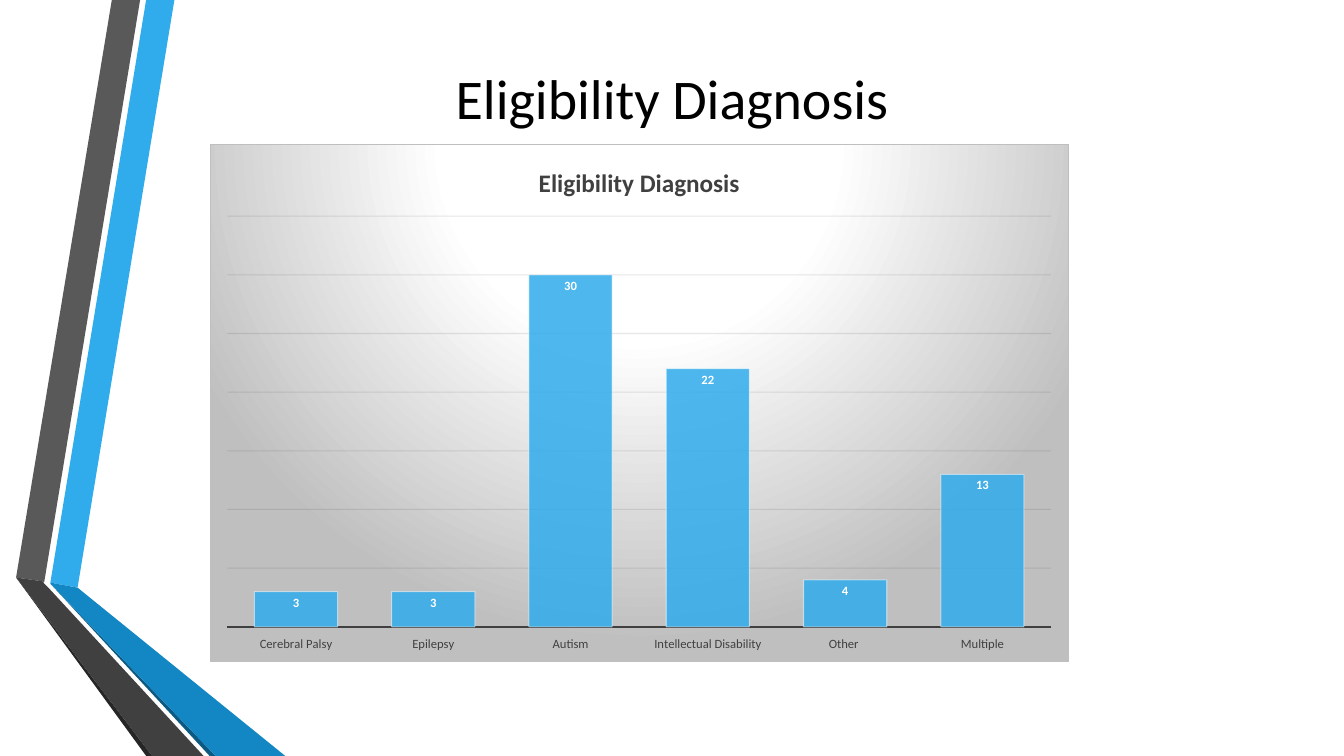
from dataclasses import dataclass

from lxml.etree import fromstring
from pptx import Presentation
from pptx.chart.data import CategoryChartData
from pptx.dml.color import RGBColor
from pptx.enum.chart import XL_CHART_TYPE, XL_LABEL_POSITION, XL_TICK_LABEL_POSITION, XL_TICK_MARK
from pptx.enum.text import MSO_ANCHOR, PP_ALIGN
from pptx.oxml.ns import qn
from pptx.util import Inches, Pt

TITLE = "Eligibility Diagnosis"
DIAGNOSES = {
    "Cerebral Palsy": 3,
    "Epilepsy": 3,
    "Autism": 30,
    "Intellectual Disability": 22,
    "Other ": 4,
    "Multiple": 13,
}

# Ribbon outlines in hundredths of an inch, from back to front
RIBBONS = [
    ("30ACEC", [(50, 578), (77, 583), (173, 0), (145, 0)]),
    ("595959", [(139, 0), (111, 0), (16, 573), (44, 577)]),
    ("262626", [(16, 573), (145, 750), (151, 750)]),
    ("0C5A82", [(50, 579), (208, 750), (214, 750)]),
    ("1287C3", [(50, 579), (214, 750), (283, 750), (77, 583), (50, 578)]),
    ("404040", [(202, 750), (48, 583), (43, 578), (44, 577), (16, 573), (151, 750)]),
]

SLIDE_SIZE = (13.33, 7.5)
TITLE_BOX = (0.92, 0.37, 11.49, 1.18)
CHART_BOX = (2.08, 1.43, 8.52, 5.14)
A_NS = "http://schemas.openxmlformats.org/drawingml/2006/main"
C_NS = "http://schemas.openxmlformats.org/drawingml/2006/chart"


@dataclass(frozen=True)
class Theme:
    font: str = "Calibri"
    black: str = "000000"
    white: str = "FFFFFF"
    dark: str = "404040"
    grid: str = "0D0D0D"
    edge: str = "BFBFBF"
    bar: str = "30ACEC"
    title_size: int = 40
    chart_title_size: int = 18
    chart_size: int = 10
    label_size: int = 9
    thin: float = 0.75
    thick: float = 1.5


THEME = Theme()


def style_font(font, size, color, bold=False):
    font.name = THEME.font
    font.size = Pt(size)
    font.bold = bold
    font.color.rgb = RGBColor.from_string(color)


def paint(fill, color, opacity=100):
    fill.solid()
    fill.fore_color.rgb = RGBColor.from_string(color)
    if opacity < 100:
        solid = fill._xPr.find(qn("a:solidFill"))
        solid[0].append(fromstring(f'<a:alpha xmlns:a="{A_NS}" val="{opacity * 1000}"/>'))


def style_line(line, color, width, opacity=100):
    line.width = Pt(width)
    paint(line.fill, color, opacity)


def add_ribbons(page):
    group = page.shapes.add_group_shape()
    for color, points in RIBBONS:
        builder = group.shapes.build_freeform(*points[0], scale=Inches(0.01))
        builder.add_line_segments(points[1:], close=True)
        ribbon = builder.convert_to_shape()
        ribbon.shadow.inherit = False
        paint(ribbon.fill, color)
        ribbon.line.fill.background()


def write_title(page):
    box = page.shapes.title
    box.left, box.top, box.width, box.height = map(Inches, TITLE_BOX)
    frame = box.text_frame
    frame.word_wrap = True
    frame.vertical_anchor = MSO_ANCHOR.MIDDLE
    para = frame.paragraphs[0]
    para.alignment = PP_ALIGN.CENTER
    span = para.add_run()
    span.text = TITLE
    style_font(span.font, THEME.title_size, THEME.black)


def add_backdrop(chart):
    """Give the chart area its circular gradient and thin border."""
    stops = [(0, THEME.white), (39, THEME.white), (100, THEME.edge)]
    gradient = "".join(
        f'<a:gs pos="{share * 1000}"><a:srgbClr val="{color}"/></a:gs>' for share, color in stops
    )
    backdrop = fromstring(
        f'<c:spPr xmlns:c="{C_NS}" xmlns:a="{A_NS}"><a:gradFill><a:gsLst>{gradient}</a:gsLst>'
        '<a:path path="circle"><a:fillToRect l="50000" t="-80000" r="50000" b="180000"/></a:path>'
        f'</a:gradFill><a:ln w="{Pt(THEME.thin)}"><a:solidFill><a:srgbClr val="{THEME.edge}"/>'
        "</a:solidFill></a:ln></c:spPr>"
    )
    chart._chartSpace.find(qn("c:chart")).addnext(backdrop)


def style_axes(chart):
    categories = chart.category_axis
    categories.major_tick_mark = categories.minor_tick_mark = XL_TICK_MARK.NONE
    categories.tick_label_position = XL_TICK_LABEL_POSITION.LOW
    style_font(categories.tick_labels.font, THEME.label_size, THEME.dark)
    style_line(categories.format.line, THEME.dark, THEME.thick)

    values = chart.value_axis
    values.visible = False
    values.minimum_scale, values.maximum_scale, values.major_unit = 0, 35, 5
    values.has_major_gridlines = True
    style_line(values.major_gridlines.format.line, THEME.grid, THEME.thin, opacity=10)


def style_bars(plot):
    plot.gap_width = 65
    plot.vary_by_categories = False
    bars = plot.series[0]
    bars.invert_if_negative = False
    paint(bars.format.fill, THEME.bar, opacity=85)
    style_line(bars.format.line, THEME.white, THEME.thin, opacity=50)
    labels = bars.data_labels
    labels.show_value = True
    labels.position = XL_LABEL_POSITION.INSIDE_END
    style_font(labels.font, THEME.label_size, THEME.white, bold=True)


def add_diagnosis_chart(page):
    data = CategoryChartData()
    data.categories = list(DIAGNOSES)
    data.add_series("Series 1", list(DIAGNOSES.values()))
    chart = page.shapes.add_chart(
        XL_CHART_TYPE.COLUMN_CLUSTERED, *map(Inches, CHART_BOX), data
    ).chart
    style_font(chart.font, THEME.chart_size, THEME.black)
    chart.has_legend = False
    chart.has_title = True
    span = chart.chart_title.text_frame.paragraphs[0].add_run()
    span.text = TITLE
    style_font(span.font, THEME.chart_title_size, THEME.dark, bold=True)
    chart.chart_title.include_in_layout = False
    add_backdrop(chart)
    style_axes(chart)
    style_bars(chart.plots[0])


def main():
    deck = Presentation()
    deck.slide_width, deck.slide_height = map(Inches, SLIDE_SIZE)
    page = deck.slides.add_slide(deck.slide_layouts.get_by_name("Title Only"))
    add_ribbons(page)
    write_title(page)
    add_diagnosis_chart(page)
    deck.save("out.pptx")


if __name__ == "__main__":
    main()
